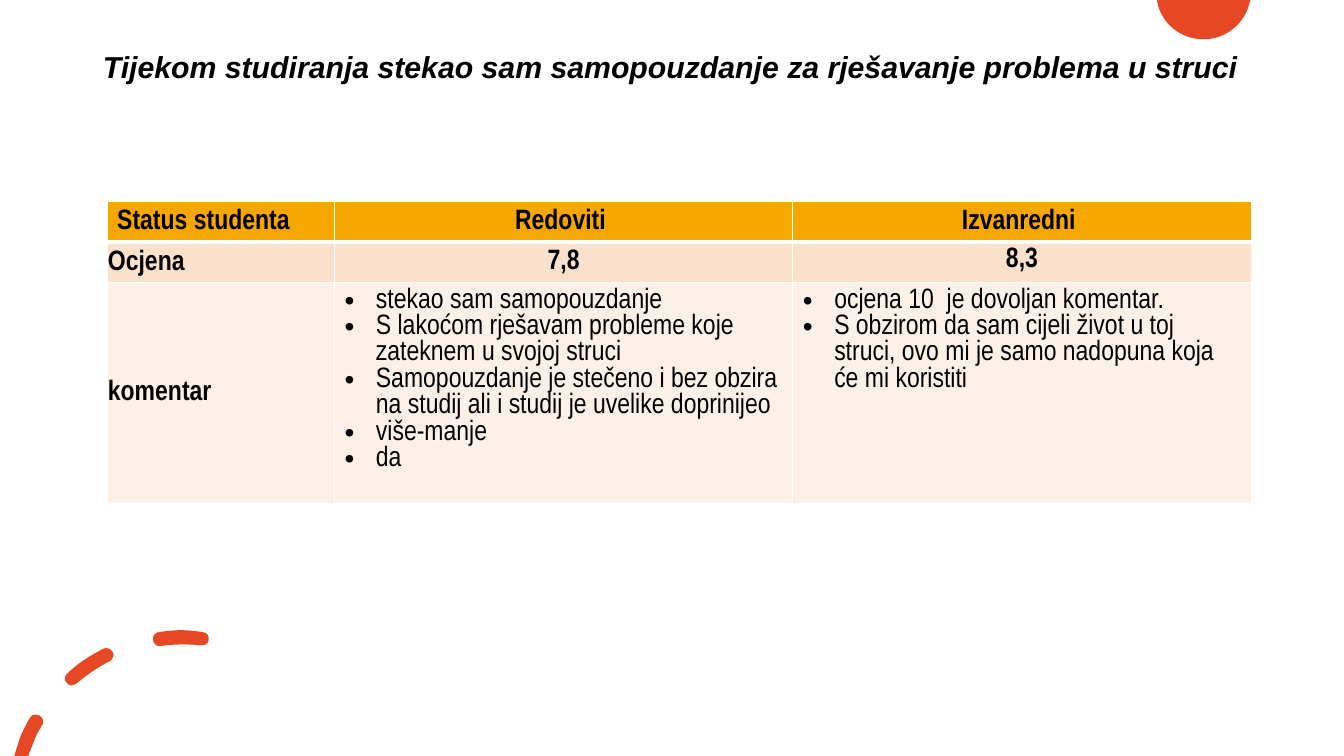
import pptx
import pptx.dml.color
import pptx.enum.text
import pptx.oxml
import pptx.oxml.ns
import pptx.util
from lxml import etree

Cm = pptx.util.Cm
Pt = pptx.util.Pt
RGBColor = pptx.dml.color.RGBColor
ALIGN = pptx.enum.text.PP_ALIGN
ANCHOR = pptx.enum.text.MSO_ANCHOR
qn = pptx.oxml.ns.qn

BLACK = RGBColor(0x00, 0x00, 0x00)
WHITE = RGBColor(0xFF, 0xFF, 0xFF)
ORANGE_RED = RGBColor(0xE6, 0x48, 0x23)
ROW_FILLS = [RGBColor(0xF5, 0xA7, 0x00), RGBColor(0xFB, 0xE1, 0xCC), RGBColor(0xFD, 0xF1, 0xE7)]

TITLE = "Tijekom studiranja stekao sam samopouzdanje za rješavanje problema u struci"
ROWS = [
    ["Status studenta", "Redoviti ", "Izvanredni "],
    ["Ocjena", "7,8", "8,3"],
    ["komentar",
     ["stekao sam samopouzdanje",
      "S lakoćom rješavam probleme koje zateknem u svojoj struci",
      "Samopouzdanje je stečeno i bez obzira na studij ali i studij je uvelike doprinijeo",
      "više-manje",
      "da"],
     ["ocjena 10  je dovoljan komentar.",
      "S obzirom da sam cijeli život u toj struci, ovo mi je samo nadopuna koja će mi koristiti"]],
]
COL_WIDTHS = [5.73, 11.55, 11.55]
ROW_HEIGHTS = [1.02, 1.02, 5.58]

# Outlines in cm: a start point, then lines (x, y) and curves (x1, y1, x2, y2, x, y)
CAP = [[(29.16, 0), (31.52, 0), (31.5, 0.03), (31.39, 0.58, 30.91, 0.99, 30.33, 0.99),
        (29.74, 0.99, 29.26, 0.58, 29.16, 0.03)]]
DASHES = [
    [(0.91, 18.01), (0.86, 17.98, 0.79, 18.03, 0.76, 18.08),
     (0.66, 18.24, 0.58, 18.42, 0.51, 18.57), (0.36, 19.05), (0.71, 19.05), (0.84, 18.72),
     (0.89, 18.57, 0.97, 18.42, 1.07, 18.26), (1.12, 18.19, 1.07, 18.06, 0.99, 18.03),
     (0.97, 18.01, 0.94, 18.01, 0.91, 18.01)],
    [(2.67, 16.33), (2.64, 16.33, 2.62, 16.33, 2.6, 16.35),
     (2.29, 16.51, 1.96, 16.71, 1.7, 16.97), (1.63, 17.02, 1.6, 17.15, 1.68, 17.2),
     (1.7, 17.25, 1.75, 17.27, 1.8, 17.27), (1.85, 17.27, 1.88, 17.25, 1.93, 17.22),
     (2.18, 17.02, 2.46, 16.81, 2.77, 16.66), (2.84, 16.61, 2.9, 16.51, 2.84, 16.43),
     (2.82, 16.36, 2.74, 16.33, 2.67, 16.33)],
    [(4.55, 15.88), (4.37, 15.88, 4.19, 15.9, 4.01, 15.93),
     (3.91, 15.93, 3.84, 16.03, 3.86, 16.13), (3.86, 16.21, 3.94, 16.28, 4.01, 16.28),
     (4.04, 16.28), (4.39, 16.23, 4.72, 16.23, 5.05, 16.26),
     (5.16, 16.28, 5.26, 16.21, 5.26, 16.13), (5.28, 16.03, 5.21, 15.93, 5.11, 15.93),
     (4.93, 15.9, 4.72, 15.88, 4.55, 15.88)],
]


def write(p, text, font="Arial Narrow", size=20, bold=True, italic=False, align=ALIGN.LEFT,
          spacing=None, bullet=False):
    p.alignment = align
    p.line_spacing = spacing
    r = p.add_run()
    r.text = text
    f = r.font
    f.name, f.size, f.bold, f.italic = font, Pt(size), bold, italic
    f.color.rgb = BLACK
    if bullet:
        pPr = p._p.get_or_add_pPr()
        pPr.set("marL", str(Cm(0.79)))
        pPr.set("indent", str(-Cm(0.79)))
        for xml in ('<a:buFont %s typeface="Arial"/>', '<a:buChar %s char="•"/>'):
            pPr.append(pptx.oxml.parse_xml(xml % pptx.oxml.ns.nsdecls("a")))


def bend(sp, pieces):
    """Give each segment of a freeform that has control points its curve."""
    for segment, piece in zip(list(sp._element.iter(qn("a:lnTo"))), pieces):
        if len(piece) == 2:
            continue
        segment.tag = qn("a:cubicBezTo")
        for i in (0, 2):
            pt = etree.Element(qn("a:pt"), x=str(Cm(piece[i]) - sp.left),
                               y=str(Cm(piece[i + 1]) - sp.top))
            segment.insert(i // 2, pt)


class Deck:
    def __init__(self):
        self.prs = pptx.Presentation()
        self.prs.slide_width, self.prs.slide_height = Cm(33.87), Cm(19.05)
        self.s = self.prs.slides.add_slide(self.prs.slide_layouts[5])

    def title(self, text, x, y, w, h):
        sp = self.s.shapes.title
        sp.left, sp.top, sp.width, sp.height = Cm(x), Cm(y), Cm(w), Cm(h)
        tf = sp.text_frame
        tf.vertical_anchor = ANCHOR.MIDDLE
        tf.auto_size = pptx.enum.text.MSO_AUTO_SIZE.NONE
        write(tf.paragraphs[0], text, font="Arial", size=21.6, italic=True, spacing=0.9)

    def outline(self, contours, color):
        fb = None
        for contour in contours:
            start, *ends = [(Cm(piece[-2]), Cm(piece[-1])) for piece in contour]
            if fb is None:
                fb = self.s.shapes.build_freeform(*start)
            else:
                fb.move_to(*start)
            # A contour returns to its start, which closes it
            fb.add_line_segments(ends, close=True)
        sp = fb.convert_to_shape()
        bend(sp, [piece for contour in contours for piece in contour[1:]])
        sp.shadow.inherit = False
        sp.fill.solid()
        sp.fill.fore_color.rgb = color
        sp.line.fill.background()

    def borders(self, cell, **widths):
        tcPr = cell._tc.get_or_add_tcPr()
        xml = '<a:ln%s %s w="%d"><a:solidFill><a:srgbClr val="%s"/></a:solidFill></a:ln%s>'
        ns = pptx.oxml.ns.nsdecls("a")
        for i, side in enumerate("LRTB"):
            width = Pt(widths.get(side, 1))
            tcPr.insert(i, pptx.oxml.parse_xml(xml % (side, ns, width, WHITE, side)))

    def table(self, rows, x, y):
        frame = self.s.shapes.add_table(len(rows), len(rows[0]), Cm(x), Cm(y),
                                        Cm(sum(COL_WIDTHS)), Cm(sum(ROW_HEIGHTS)))
        table = frame.table
        for column, width in zip(table.columns, COL_WIDTHS):
            column.width = Cm(width)
        for row, height in zip(table.rows, ROW_HEIGHTS):
            row.height = Cm(height)
        for i, row in enumerate(rows):
            for j, content in enumerate(row):
                self.cell(table.cell(i, j), content, i, j)

    def cell(self, cell, content, i, j):
        cell.fill.solid()
        cell.fill.fore_color.rgb = ROW_FILLS[i]
        self.borders(cell, B=3 if i == 0 else 1, T=3 if i == 1 else 1)
        if i and j == 0:
            cell.margin_left = cell.margin_right = cell.margin_top = Cm(0.02)
            cell.margin_bottom = 0
        bulleted = isinstance(content, list)
        top = bulleted or (i, j) == (1, 2)
        cell.vertical_anchor = ANCHOR.TOP if top else ANCHOR.MIDDLE
        tf = cell.text_frame
        for n, text in enumerate(content if bulleted else [content]):
            p = tf.add_paragraph() if n else tf.paragraphs[0]
            write(p, text, bold=not bulleted, bullet=bulleted,
                  align=ALIGN.CENTER if j and not bulleted else ALIGN.LEFT)


def main():
    deck = Deck()
    # Corner decorations
    deck.outline(CAP, ORANGE_RED)
    deck.outline(DASHES, ORANGE_RED)
    # Title and survey table
    deck.title(TITLE, 2.34, 0.69, 29.21, 2.06)
    deck.table(ROWS, 2.7, 5.08)
    deck.prs.save("out.pptx")


if __name__ == "__main__":
    main()
